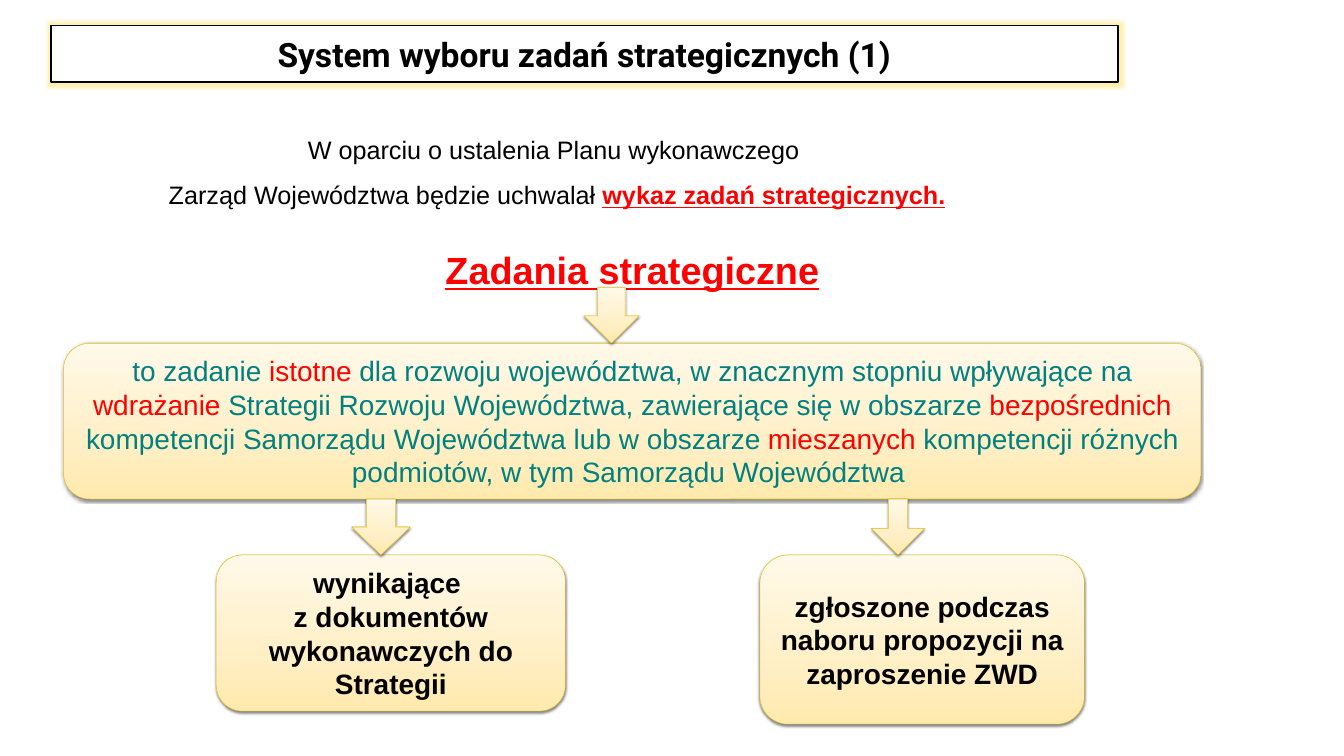
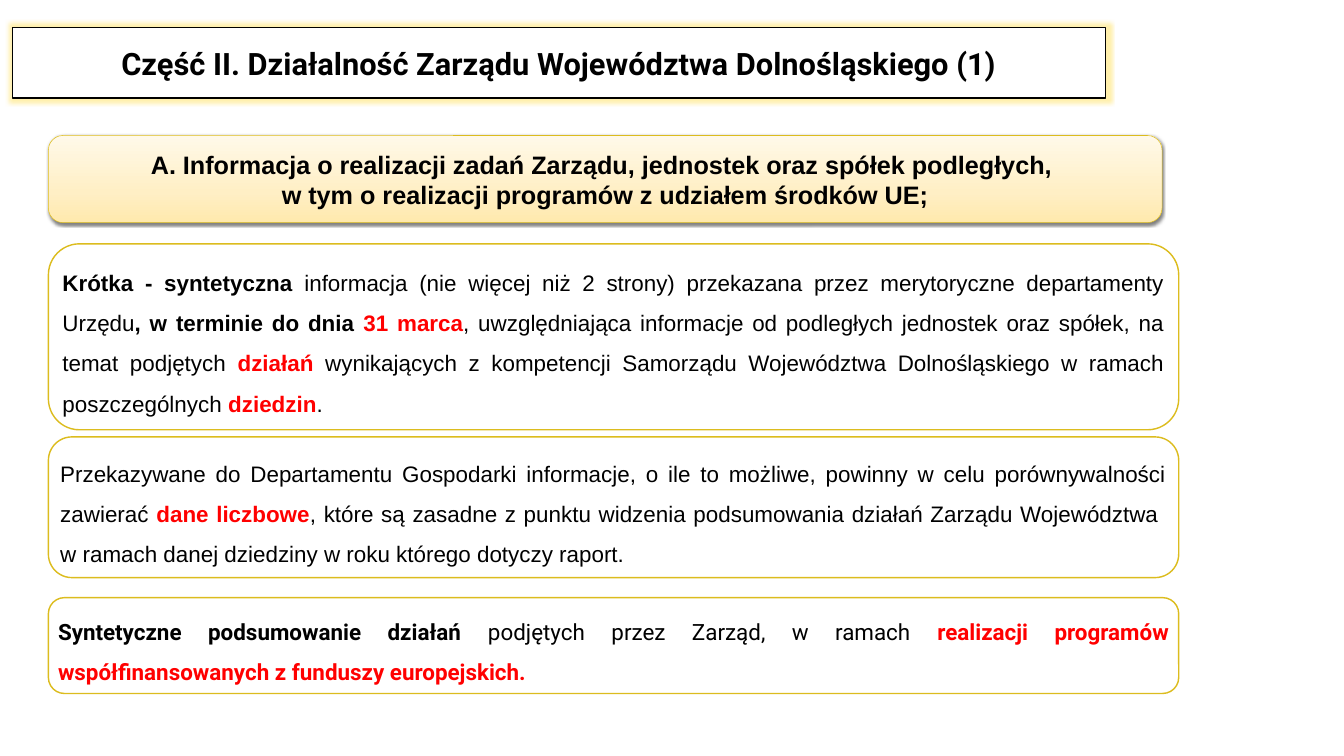
from lxml import etree
from pptx import Presentation
from pptx.dml.color import RGBColor
from pptx.enum.shapes import MSO_SHAPE
from pptx.enum.text import MSO_ANCHOR, MSO_AUTO_SIZE, PP_ALIGN
from pptx.oxml import parse_xml
from pptx.oxml.ns import nsdecls, qn
from pptx.util import Cm, Pt

ROUNDED, DOWN_ARROW = MSO_SHAPE.ROUNDED_RECTANGLE, MSO_SHAPE.DOWN_ARROW
TOP, MIDDLE = MSO_ANCHOR.TOP, MSO_ANCHOR.MIDDLE
CENTER, JUSTIFY = PP_ALIGN.CENTER, PP_ALIGN.JUSTIFY
FIXED, GROW = MSO_AUTO_SIZE.NONE, MSO_AUTO_SIZE.SHAPE_TO_FIT_TEXT

BLACK = RGBColor(0x00, 0x00, 0x00)
WHITE = RGBColor(0xFF, 0xFF, 0xFF)
RED = RGBColor(0xFF, 0x00, 0x00)
TEAL = RGBColor(0x00, 0x80, 0x80)
GOLD = RGBColor(0xDC, 0xBC, 0x1E)
GLOW = RGBColor(0xFF, 0xD9, 0x30)
CREAM_STOPS = (
    (0, RGBColor(0xFF, 0xE9, 0xAD)),
    (35, RGBColor(0xFF, 0xEF, 0xC5)),
    (100, RGBColor(0xFF, 0xF9, 0xE9)),
)

BODY_FONT, TITLE_FONT = "Arial", "Roboto"
PLAIN = {}
STRONG = {"bold": True}
KEY = {"color": RED}
ALERT = {"color": RED, "bold": True}
UNDERLINED = {"color": RED, "bold": True, "underline": True}
SHADOW_XML = (
    '<a:outerShdw {ns} blurRad="50800" dist="25400" dir="5400000" rotWithShape="0">'
    '<a:srgbClr val="000000"><a:alpha val="50000"/></a:srgbClr></a:outerShdw>'
)
GLOW_XML = (
    '<a:glow {ns} rad="139700"><a:srgbClr val="{color}">'
    '<a:alpha val="40000"/></a:srgbClr></a:glow>'
)


def cm_box(box):
    """Turn left, top, width and height in centimetres into lengths."""
    return [Cm(length) for length in box]


def write_text(frame, paragraphs, size=32, font=BODY_FONT, color=BLACK, bold=False,
               align=CENTER, spacing=None, anchor=MIDDLE, fit=FIXED, inset=None):
    """Fill a text frame with paragraphs made of (text, style) runs."""
    frame.word_wrap = True
    frame.auto_size = fit
    frame.vertical_anchor = anchor
    if inset is not None:
        frame.margin_left = frame.margin_right = Cm(inset)
        frame.margin_top = frame.margin_bottom = Cm(inset)
    for index, runs in enumerate(paragraphs):
        paragraph = frame.add_paragraph() if index else frame.paragraphs[0]
        paragraph.alignment = align
        if spacing:
            paragraph.line_spacing = spacing
        for text, style in runs:
            for row, line in enumerate(text.split("\n")):
                if row:
                    paragraph.add_line_break()
                run = paragraph.add_run()
                run.text = line
                run.font.name = font
                run.font.size = Pt(size)
                run.font.bold = style.get("bold", bold)
                run.font.underline = style.get("underline", False)
                run.font.color.rgb = style.get("color", color)


def add_effect(shape, xml):
    """Replace the inherited effects of a shape with the given one."""
    shape.shadow.inherit = False
    effects = shape.element.spPr.find(qn("a:effectLst"))
    effects.append(parse_xml(xml.format(ns=nsdecls("a"), color=GLOW)))


def outline(shape, color, width):
    """Draw a solid outline."""
    shape.line.color.rgb = color
    shape.line.width = Pt(width)


def add_title(slide, box, text, size):
    """Shape the title placeholder as a glowing rounded frame."""
    title = slide.shapes.title
    title.left, title.top, title.width, title.height = cm_box(box)
    geometry = parse_xml(f'<a:prstGeom {nsdecls("a")} prst="roundRect"><a:avLst/></a:prstGeom>')
    title.element.spPr.insert(1, geometry)
    title.fill.solid()
    title.fill.fore_color.rgb = WHITE
    outline(title, BLACK, 2)
    add_effect(title, GLOW_XML)
    write_text(title.text_frame, [[(text, STRONG)]], size=size, font=TITLE_FONT)


def add_cream_shape(slide, box, kind=ROUNDED):
    """Add a shape with the cream gradient, gold outline and soft shadow."""
    shape = slide.shapes.add_shape(kind, *cm_box(box))
    gradient = parse_xml(
        f'<a:gradFill {nsdecls("a")} rotWithShape="1"><a:gsLst/>'
        '<a:lin ang="16200000" scaled="0"/></a:gradFill>')
    for position, color in CREAM_STOPS:
        stop = etree.SubElement(gradient[0], qn("a:gs"), pos=str(position * 1000))
        etree.SubElement(stop, qn("a:srgbClr"), val=str(color))
    shape.element.spPr.insert(2, gradient)
    outline(shape, GOLD, 0.75)
    add_effect(shape, SHADOW_XML)
    return shape


def add_cream_card(slide, box, runs, **text_format):
    """Add a cream card with one paragraph."""
    card = add_cream_shape(slide, box)
    write_text(card.text_frame, [runs], **text_format)


def add_note(slide, box, runs, font=BODY_FONT):
    """Add a white gold-framed note with justified text."""
    note = slide.shapes.add_shape(ROUNDED, *cm_box(box))
    note.shadow.inherit = False
    note.fill.solid()
    note.fill.fore_color.rgb = WHITE
    outline(note, GOLD, 2)
    write_text(note.text_frame, [runs], font=font, align=JUSTIFY,
               spacing=1.5, anchor=TOP, fit=GROW)


def add_label(slide, box, paragraphs, size):
    """Add centred free text with wide line spacing."""
    label = slide.shapes.add_textbox(*cm_box(box))
    write_text(label.text_frame, paragraphs, size=size, spacing=1.5, anchor=TOP, fit=GROW)


def add_arrow(slide, center, top, width, shaft=0.5):
    """Add a down arrow centred on the given position."""
    arrow = add_cream_shape(slide, (center - width / 2, top, width, 2.82), DOWN_ARROW)
    arrow.adjustments[0] = shaft


def build_selection_slide(slide):
    """Lay out the strategic task selection scheme."""
    add_title(slide, (2.57, 1.3, 53.77, 2.84), "System wyboru zadań strategicznych (1)", 48)
    add_label(slide, (1.5, 5.87, 53.16, 4.88), [
        [("W oparciu o ustalenia Planu wykonawczego ", PLAIN)],
        [("Zarząd Województwa będzie uchwalał ", PLAIN),
         ("wykaz zadań strategicznych.", UNDERLINED)],
    ], 36)
    add_cream_card(slide, (3.2, 17.3, 57.33, 7.85), [
        ("to zadanie ", PLAIN),
        ("istotne", KEY),
        (" dla rozwoju województwa, w znacznym stopniu wpływające na ", PLAIN),
        ("wdrażanie", KEY),
        (" Strategii Rozwoju Województwa, zawierające się w obszarze ", PLAIN),
        ("bezpośrednich", KEY),
        (" kompetencji Samorządu Województwa lub w obszarze ", PLAIN),
        ("mieszanych", KEY),
        (" kompetencji różnych podmiotów, w tym Samorządu Województwa ", PLAIN),
    ], size=40, color=TEAL, fit=GROW)
    add_label(slide, (21.59, 11.18, 20.57, 3.71), [[("Zadania strategiczne", UNDERLINED)]], 54)
    task_sources = (
        ((10.9, 27.97, 17.6, 7.87), "wynikające \nz dokumentów wykonawczych do Strategii"),
        ((38.3, 27.97, 16.36, 8.53), "zgłoszone podczas naboru propozycji na zaproszenie ZWD"),
    )
    for box, text in task_sources:
        add_cream_card(slide, box, [(text, STRONG)], size=40, inset=0.18)
    add_arrow(slide, 19.2, 25.15, 2.95)
    add_arrow(slide, 45.26, 25.15, 2.69, shaft=0.36)
    add_arrow(slide, 30.82, 14.48, 2.77)


def build_activity_slide(slide):
    """Lay out the rules for reporting on the board's activity."""
    add_title(slide, (0.64, 1.4, 55.09, 3.53),
              "Część II. Działalność Zarządu Województwa Dolnośląskiego (1)", 44)
    left, width = 2.44, 56.97
    add_note(slide, (left, 12.29, width, 9.37), [
        ("Krótka - syntetyczna", STRONG),
        (" informacja (nie więcej niż 2 strony) przekazana przez merytoryczne "
         "departamenty Urzędu", PLAIN),
        (", w terminie do dnia ", STRONG),
        ("31 marca", ALERT),
        (", uwzględniająca informacje od podległych jednostek oraz spółek, "
         "na temat podjętych ", PLAIN),
        ("działań", ALERT),
        (" wynikających z kompetencji Samorządu Województwa Dolnośląskiego "
         "w ramach poszczególnych ", PLAIN),
        ("dziedzin", ALERT),
        (".", PLAIN),
    ])
    add_note(slide, (left, 22.02, width, 7.09), [
        ("Przekazywane do Departamentu Gospodarki informacje, o ile to możliwe, "
         "powinny w celu porównywalności zawierać ", PLAIN),
        ("dane liczbowe", ALERT),
        (", które są zasadne z punktu widzenia podsumowania działań Zarządu Województwa \n"
         "w ramach danej dziedziny w roku którego dotyczy raport.", PLAIN),
    ])
    add_note(slide, (left, 30.12, width, 4.83), [
        ("Syntetyczne podsumowanie działań ", STRONG),
        ("podjętych przez Zarząd, w ramach ", PLAIN),
        ("realizacji programów współfinansowanych z funduszy europejskich.", ALERT),
    ], font=TITLE_FONT)
    add_cream_card(slide, (left, 6.83, 56.13, 4.39), [
        ("A. Informacja o realizacji zadań Zarządu, jednostek oraz spółek podległych, \n"
         "w tym o realizacji programów z udziałem środków UE;", STRONG),
    ], size=36)


def main():
    """Build and save the presentation."""
    presentation = Presentation()
    presentation.slide_width, presentation.slide_height = Cm(67.74), Cm(38.1)
    title_only = presentation.slide_layouts[5]
    for build in (build_selection_slide, build_activity_slide):
        build(presentation.slides.add_slide(title_only))
    presentation.save("out.pptx")


if __name__ == "__main__":
    main()
